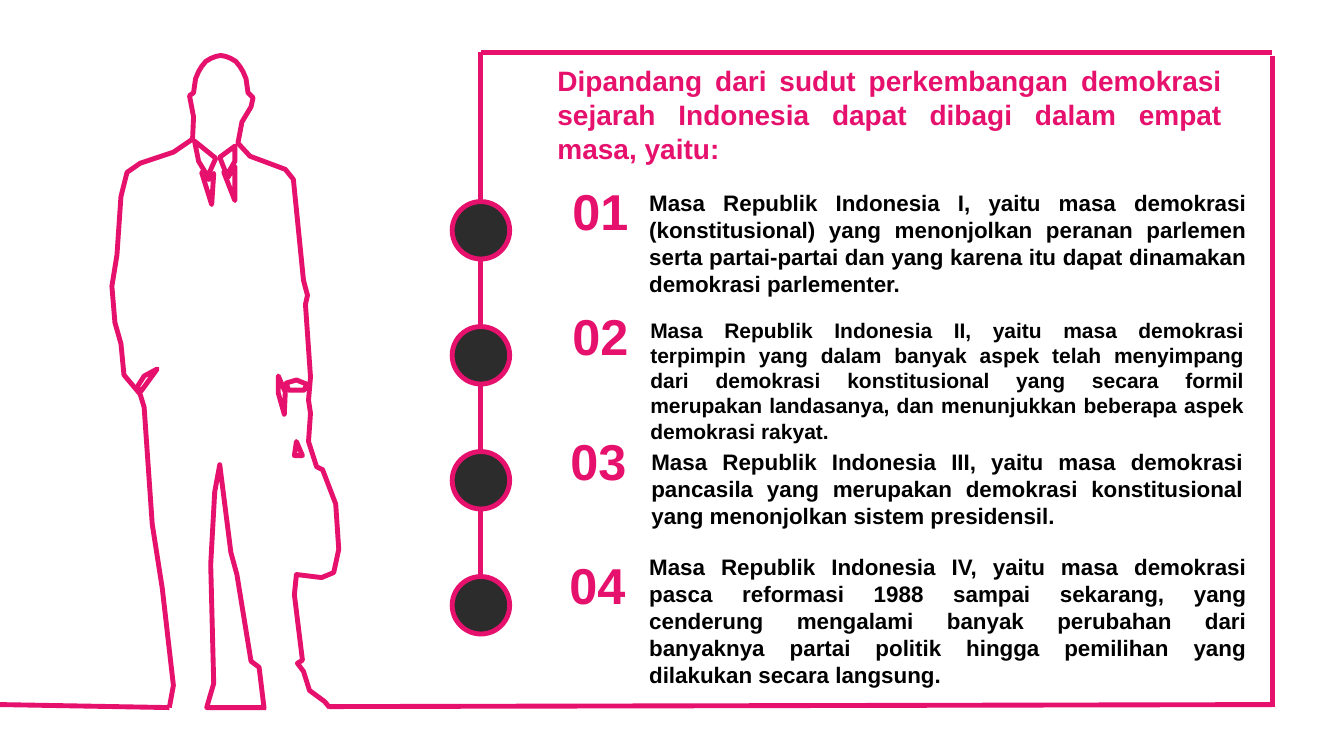
import math

import lxml.etree
import pptx
import pptx.dml.color
import pptx.enum.shapes
import pptx.enum.text
import pptx.oxml.ns
import pptx.util

THEME = {
    "accent": pptx.dml.color.RGBColor.from_string("E6106D"),
    "ink": pptx.dml.color.RGBColor.from_string("000000"),
    "dot": pptx.dml.color.RGBColor.from_string("2C2C2C"),
    "font": "Arial",
    "line": pptx.util.Pt(3.5),
    "heading": 20,
    "number": 36,
    "body": 16,
    "small": 15,
}
ALIGN = pptx.enum.text.PP_ALIGN

deck = pptx.Presentation()
deck.slide_width = pptx.util.Inches(13.33)
deck.slide_height = pptx.util.Inches(7.5)
slide = deck.slides.add_slide(deck.slide_layouts[6])
shapes = slide.shapes

# The grid has 75 rows of square cells; all places below count cells.
CELL = deck.slide_height / 75


def cells(*counts):
    """Turn counts of grid cells into lengths."""
    return [pptx.util.Emu(round(count * CELL)) for count in counts]


def write(text, box, size, color, align, side=1.0, anchor="TOP"):
    """Add one bold paragraph in a box given as left, top, width, height."""
    frame = shapes.add_textbox(*cells(*box)).text_frame
    frame.word_wrap = True
    frame.auto_size = pptx.enum.text.MSO_AUTO_SIZE.SHAPE_TO_FIT_TEXT
    frame.vertical_anchor = pptx.enum.text.MSO_ANCHOR[anchor]
    frame.margin_left, frame.margin_right = cells(side, side)
    frame.text = text
    paragraph = frame.paragraphs[0]
    paragraph.alignment = align
    font = paragraph.runs[0].font
    font.name, font.size, font.bold = THEME["font"], pptx.util.Pt(size), True
    font.color.rgb = color


# Frame, timeline and ground
RAIL, RIGHT, TOP, GROUND = 47.7, 126.2, 5.2, 70.1
frame_lines = [
    (RAIL, 58.5, RAIL, TOP),
    (RIGHT, TOP, RAIL, TOP),
    (RIGHT, GROUND, RIGHT, 5.6),
    (RIGHT, 69.9, 32.6, GROUND),
    (16.8, 70.2, 0, 69.9),
]
for ends in frame_lines:
    edge = shapes.add_connector(
        pptx.enum.shapes.MSO_CONNECTOR.STRAIGHT, *cells(*ends))
    edge.line.color.rgb = THEME["accent"]
    edge.line.width = THEME["line"]
    lxml.etree.SubElement(
        edge.element.spPr, pptx.oxml.ns.qn("a:effectLst"))

DOT, FIRST_DOT, DOT_STEP = 5.7, 20, 12.4
for step in range(4):
    dot = shapes.add_shape(
        pptx.enum.shapes.MSO_SHAPE.OVAL,
        *cells(RAIL - DOT / 2, FIRST_DOT + step * DOT_STEP, DOT, DOT))
    dot.shadow.inherit = False
    dot.fill.solid()
    dot.fill.fore_color.rgb = THEME["dot"]
    dot.line.color.rgb = THEME["accent"]
    dot.line.width = THEME["line"]

# Outline of the businessman, in tenths of a cell
inner_leg = [
    (262, 703), (257, 662), (249, 656), (235, 570), (229, 548), (218, 461),
    (213, 488), (209, 560), (212, 678), (205, 702), (264, 702),
]
left_side = [
    (168, 702), (172, 680), (161, 584), (151, 520), (143, 404), (139, 391),
    (123, 372), (120, 341), (114, 320), (111, 284), (116, 253), (120, 195),
    (126, 171), (139, 162), (172, 151), (191, 138), (192, 116), (188, 95),
]
crown = [
    (219 + 27 * math.cos(angle), 92 - 37 * math.sin(angle))
    for angle in (math.pi * (1 - step / 16) for step in range(17))
]
right_side = [
    (251, 97), (249, 106), (240, 121), (236, 142), (248, 155), (283, 168),
    (291, 178), (301, 278), (305, 293), (303, 302), (308, 374), (306, 397),
    (308, 410), (306, 438), (314, 463), (320, 466), (333, 500), (336, 545),
    (331, 568), (319, 573), (294, 570), (292, 590), (300, 655), (295, 658),
    (301, 666), (307, 685), (322, 696), (327, 702),
]
details = {
    "handle": [(300, 452), (294, 438), (292, 452)],
    "cuff": [(286, 387), (302, 387), (304, 381), (294, 377), (284, 380)],
    "hand": [(282, 411), (283, 389), (276, 373), (276, 390)],
    "right tie": [(233, 199), (233, 165), (226, 176), (222, 171)],
    "right collar": [(225, 174), (233, 160), (233, 145), (218, 156)],
    "left tie": [(210, 203), (212, 172), (207, 178), (200, 171)],
    "left collar": [(206, 175), (214, 157), (193, 140), (197, 160)],
    "pocket": [(140, 388), (156, 366), (143, 373), (136, 384)],
}

outline = shapes.build_freeform(*inner_leg[0], scale=CELL / 10)
outline.add_line_segments(inner_leg[1:], close=False)
outline.move_to(*left_side[0])
outline.add_line_segments(left_side[1:] + crown + right_side, close=False)
for detail in details.values():
    outline.move_to(*detail[0])
    outline.add_line_segments(detail[1:], close=True)
businessman = outline.convert_to_shape()
businessman.shadow.inherit = False
businessman.fill.background()
businessman.line.color.rgb = THEME["accent"]
businessman.line.width = THEME["line"]

# Heading and the four periods
write("Dipandang dari sudut perkembangan demokrasi sejarah Indonesia dapat "
      "dibagi dalam empat masa, yaitu:",
      (54.3, 5.8, 67.9, 11.1), THEME["heading"], THEME["accent"],
      ALIGN.JUSTIFY, anchor="MIDDLE")

# Each period: number's left and top, text box, text size, side margin, text
periods = [
    ((54.3, 17.4), (63.4, 18.3, 61.2, 11.8), THEME["body"], 1.0,
     "Masa Republik Indonesia I, yaitu masa demokrasi (konstitusional) yang "
     "menonjolkan peranan parlemen serta partai-partai dan yang karena itu "
     "dapat dinamakan demokrasi parlementer."),
    ((54.3, 29.8), (63.3, 31, 61.3, 13.6), THEME["small"], 1.2,
     "Masa Republik Indonesia II, yaitu masa demokrasi terpimpin yang dalam "
     "banyak aspek telah menyimpang dari demokrasi konstitusional yang secara "
     "formil merupakan landasanya, dan menunjukkan beberapa aspek demokrasi "
     "rakyat."),
    ((54.1, 42.2), (63.4, 44, 61.1, 9.1), THEME["body"], 1.2,
     "Masa Republik Indonesia III, yaitu masa demokrasi pancasila yang "
     "merupakan demokrasi konstitusional yang menonjolkan sistem "
     "presidensil."),
    ((54, 54.5), (63.4, 54.4, 61.2, 14.5), THEME["body"], 1.0,
     "Masa Republik Indonesia IV, yaitu masa demokrasi pasca reformasi 1988 "
     "sampai sekarang, yang cenderung mengalami banyak perubahan dari "
     "banyaknya partai politik hingga pemilihan yang dilakukan secara "
     "langsung."),
]
for order, (corner, text_box, size, side, text) in enumerate(periods, 1):
    write(f"{order:02d}", (*corner, 10.5, 7.1), THEME["number"],
          THEME["accent"], ALIGN.CENTER, side=1.2)
    write(text, text_box, size, THEME["ink"], ALIGN.JUSTIFY, side=side)

deck.save("out.pptx")
